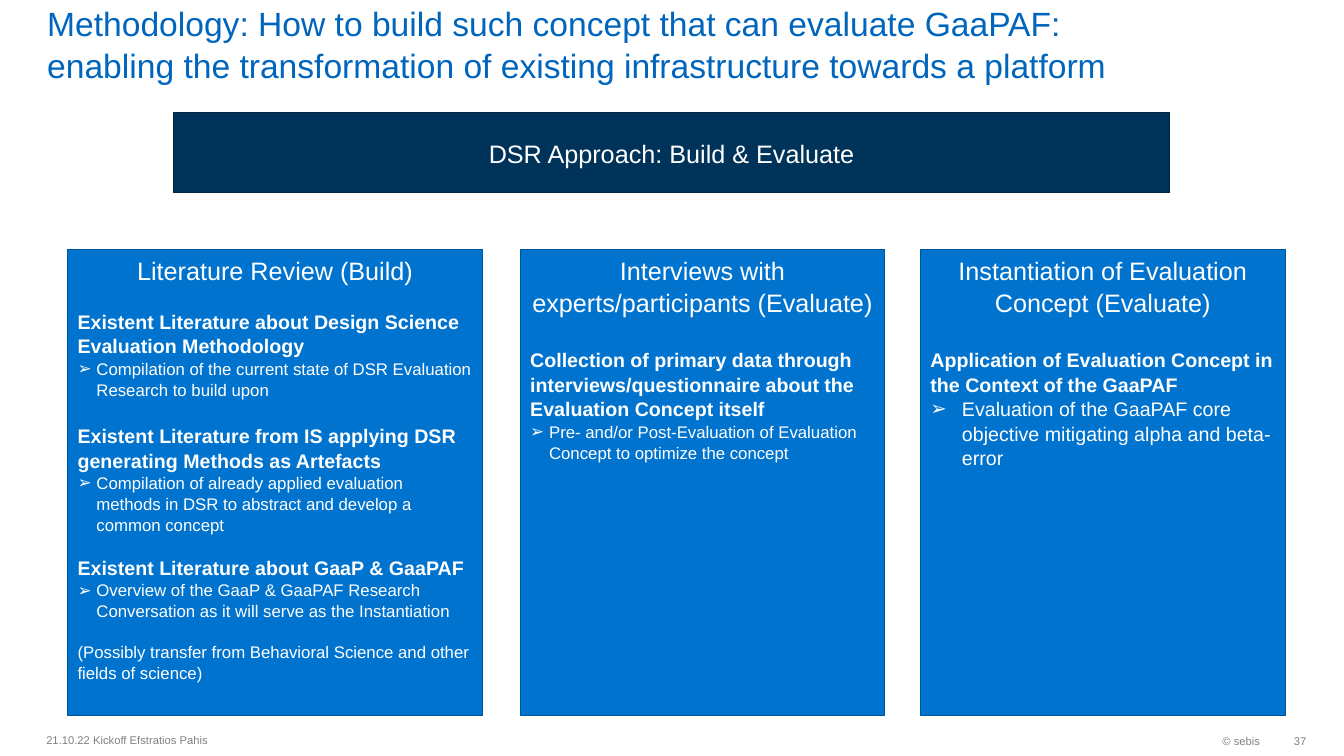
from lxml.etree import SubElement
from pptx import Presentation
from pptx.dml.color import RGBColor as RGB
from pptx.enum.shapes import MSO_SHAPE as Shape
from pptx.enum.text import MSO_ANCHOR as Anchor, MSO_AUTO_SIZE as AutoSize, PP_ALIGN as Align
from pptx.oxml.ns import qn
from pptx.util import Pt


class Theme:
    font = "Arial"
    title = RGB.from_string("0065BD")
    column = RGB.from_string("0073CF")
    column_line = RGB.from_string("005599")
    banner = RGB.from_string("003359")
    banner_line = RGB.from_string("002642")
    white = RGB.from_string("FFFFFF")
    footer = RGB.from_string("808080")
    title_size, heading_size, topic_size, detail_size, footer_size = 24, 18, 14, 12, 8
    line_spacing = 1.04
    line_width = 0.85


HEADING = dict(size=Theme.heading_size, align=Align.CENTER)
TOPIC = dict(size=Theme.topic_size, bold=True)
DETAIL = dict(size=Theme.detail_size, indent=13.5)
REMARK = dict(size=Theme.detail_size)
WIDE_DETAIL = dict(size=Theme.topic_size, indent=22.5)

COLUMNS = [
    (48.2, 296.6, [
        ("Literature Review (Build)", HEADING, 0),
        ("Existent Literature about Design Science Evaluation Methodology", TOPIC, 16.7),
        ("Compilation of the current state of DSR Evaluation Research to build upon", DETAIL, 0),
        ("Existent Literature from IS applying DSR generating Methods as Artefacts", TOPIC, 16.7),
        ("Compilation of already applied evaluation methods in DSR to abstract and "
         "develop a common concept", DETAIL, 0),
        ("Existent Literature about GaaP & GaaPAF", TOPIC, 14.3),
        ("Overview of the GaaP & GaaPAF Research Conversation as it will serve as the "
         "Instantiation", DETAIL, 0),
        ("(Possibly transfer from Behavioral Science and other fields of science)", REMARK, 14.3),
    ]),
    (371.5, 260.6, [
        ("Interviews with experts/participants (Evaluate)", HEADING, 0),
        ("Collection of primary data through interviews/questionnaire about the "
         "Evaluation Concept itself", TOPIC, 21.5),
        ("Pre- and/or Post-Evaluation of Evaluation Concept to optimize the concept", DETAIL, 0),
    ]),
    (657.4, 260.6, [
        ("Instantiation of Evaluation Concept (Evaluate)", HEADING, 0),
        ("Application of Evaluation Concept in the Context of the GaaPAF", TOPIC, 21.5),
        ("Evaluation of the GaaPAF core objective mitigating alpha and beta-error",
         WIDE_DETAIL, 0),
    ]),
]

FOOTERS = [
    ("21.10.22 Kickoff Efstratios Pahis", (26, 517, 453.6, 23), Align.LEFT, 7.2),
    ("© sebis", (738.7, 517.5, 168.5, 23), Align.RIGHT, 7.2),
    ("37", (907.2, 517.5, 26, 23), Align.RIGHT, 0),
]


class SlideBuilder:
    def __init__(self, slide, theme):
        self.slide = slide
        self.theme = theme

    def place(self, shape, box):
        for side, length in zip(("left", "top", "width", "height"), box):
            setattr(shape, side, Pt(length))

    def frame(self, shape, anchor, vertical=3.6, right=7.2):
        formats = dict(word_wrap=True, auto_size=AutoSize.NONE, vertical_anchor=anchor,
                       margin_left=Pt(7.2), margin_right=Pt(right),
                       margin_top=Pt(vertical), margin_bottom=Pt(vertical))
        for name, value in formats.items():
            setattr(shape.text_frame, name, value)
        return shape.text_frame

    def fill_text(self, paragraph, text, color, size, bold=False, align=Align.LEFT,
                  indent=0, before=0):
        formats = dict(alignment=align, line_spacing=self.theme.line_spacing,
                       space_before=Pt(before), space_after=Pt(0))
        for name, value in formats.items():
            setattr(paragraph, name, value)
        properties = paragraph._p.get_or_add_pPr()
        properties.set("marL", str(Pt(indent)))
        properties.set("indent", str(-Pt(indent)))
        if indent:
            SubElement(properties, qn("a:buFont"), typeface=self.theme.font)
            SubElement(properties, qn("a:buChar"), char="➢")
        else:
            SubElement(properties, qn("a:buNone"))
        run = paragraph.add_run()
        run.text = text
        for name, value in dict(name=self.theme.font, size=Pt(size), bold=bold).items():
            setattr(run.font, name, value)
        run.font.color.rgb = color

    def paint(self, shape, fill, line):
        shape.fill.solid()
        shape.fill.fore_color.rgb = fill
        shape.line.color.rgb = line
        shape.line.width = Pt(self.theme.line_width)

    def title(self, text, box):
        heading = self.slide.shapes.title
        self.place(heading, box)
        frame = self.frame(heading, Anchor.BOTTOM, vertical=0)
        self.fill_text(frame.paragraphs[0], text, self.theme.title, self.theme.title_size)

    def banner(self, text, box):
        banner = self.slide.shapes.add_shape(Shape.RECTANGLE, *map(Pt, box))
        banner.shadow.inherit = False
        self.paint(banner, self.theme.banner, self.theme.banner_line)
        frame = self.frame(banner, Anchor.MIDDLE)
        self.fill_text(frame.paragraphs[0], text, self.theme.white, **HEADING)

    def column(self, body, box, entries):
        self.place(body, box)
        self.paint(body, self.theme.column, self.theme.column_line)
        frame = self.frame(body, Anchor.TOP)
        for number, (text, style, before) in enumerate(entries):
            paragraph = frame.add_paragraph() if number else frame.paragraphs[0]
            self.fill_text(paragraph, text, self.theme.white, before=before, **style)

    def footer(self, text, box, align, right):
        note = self.slide.shapes.add_textbox(*map(Pt, box))
        frame = self.frame(note, Anchor.MIDDLE, right=right)
        self.fill_text(frame.paragraphs[0], text, self.theme.footer, self.theme.footer_size,
                       align=align)


def main():
    deck = Presentation()
    deck.slide_width, deck.slide_height = Pt(960), Pt(540)
    comparison = deck.slide_layouts.get_by_name("Comparison")
    slide = deck.slides.add_slide(comparison)
    builder = SlideBuilder(slide, Theme)
    builder.title("Methodology: How to build such concept that can evaluate GaaPAF: enabling "
                  "the transformation of existing infrastructure towards a platform",
                  (26.5, 3.6, 833.5, 57))
    builder.banner("DSR Approach: Build & Evaluate", (124, 80.6, 711.4, 57))
    bodies = list(slide.placeholders)[1:]
    for body, (left, width, entries) in zip(bodies, COLUMNS):
        builder.column(body, (left, 178, width, 333), entries)
    for unused in bodies[len(COLUMNS):]:
        unused.element.getparent().remove(unused.element)
    for footer in FOOTERS:
        builder.footer(*footer)
    deck.save("out.pptx")


if __name__ == "__main__":
    main()
